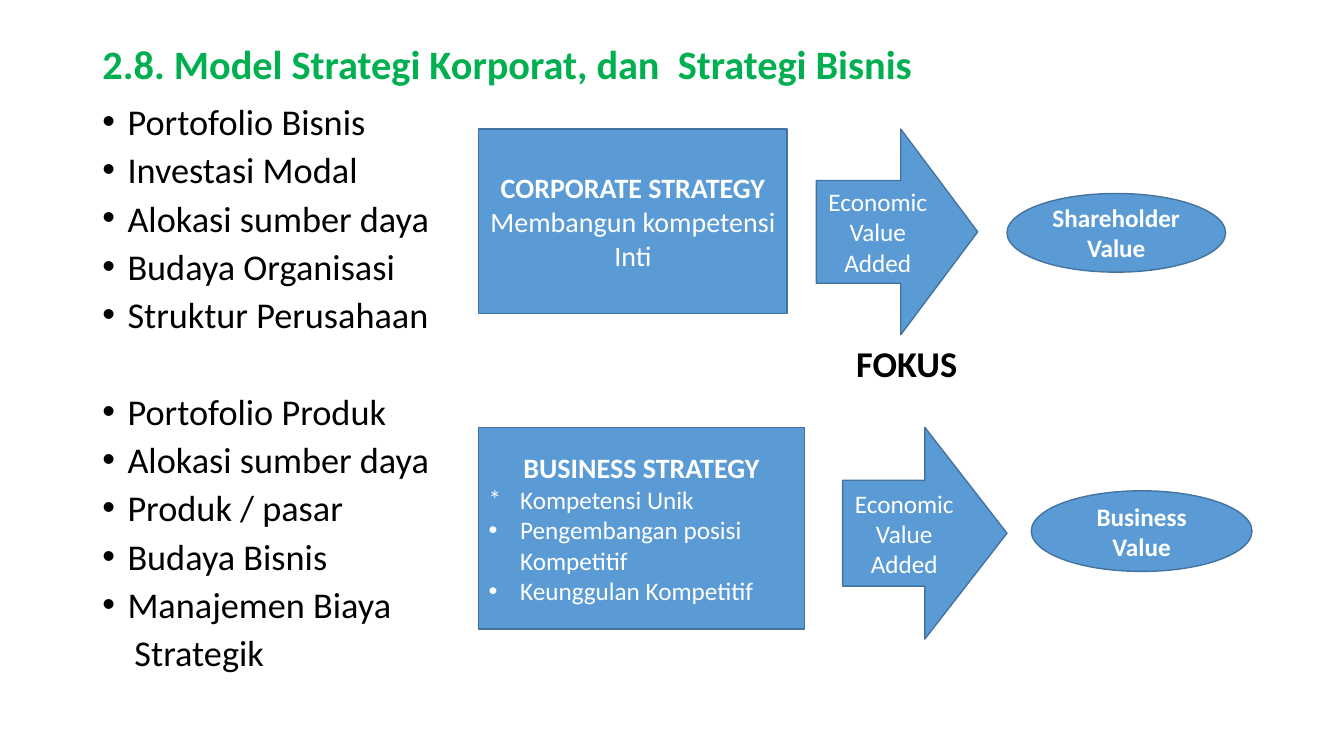
from dataclasses import dataclass

from lxml.etree import SubElement
from pptx import Presentation
from pptx.dml.color import RGBColor
from pptx.enum.shapes import MSO_SHAPE
from pptx.enum.text import MSO_ANCHOR, MSO_AUTO_SIZE, PP_ALIGN
from pptx.oxml.ns import qn
from pptx.util import Pt


@dataclass(frozen=True)
class Theme:
    """Colours, font and type sizes of the slide."""

    font: str = "Calibri"
    green: str = "00B050"
    black: str = "000000"
    white: str = "FFFFFF"
    fill: str = "5B9BD5"
    outline: str = "43739E"
    title: float = 28.8
    body: float = 25.9
    heading: float = 20
    label: float = 18


def write(frame, text, *, font, size, color, bold=False, align=PP_ALIGN.LEFT,
          bullet=None, bullet_font="Arial", margin=0, spacing=None, before=None):
    """Write one formatted paragraph, filling the first one while it is empty."""
    first = frame.paragraphs[0]
    para = frame.add_paragraph() if first.runs else first
    para.alignment = align
    if spacing is not None:
        para.line_spacing = spacing
    if before is not None:
        para.space_before = Pt(before)
    properties = para._p.get_or_add_pPr()
    properties.set("marL", str(Pt(margin)))
    properties.set("indent", str(-Pt(margin) if bullet else 0))
    if bullet:
        SubElement(properties, qn("a:buFont"), typeface=bullet_font)
        SubElement(properties, qn("a:buChar"), char=bullet)
    else:
        SubElement(properties, qn("a:buNone"))
    span = para.add_run()
    span.text = text
    span.font.name = font
    span.font.size = Pt(size)
    span.font.bold = bold
    span.font.color.rgb = RGBColor.from_string(color)


class Page:
    """A slide with its theme and a method for each kind of element."""

    def __init__(self, deck, theme):
        """Add a title-only slide to the deck."""
        self.theme = theme
        self.slide = deck.slides.add_slide(deck.slide_layouts[5])

    def title(self, text, left, top, width, height):
        """Place and format the title."""
        box = self.slide.shapes.title
        box.left, box.top, box.width, box.height = map(Pt, (left, top, width, height))
        frame = box.text_frame
        frame.auto_size = MSO_AUTO_SIZE.NONE
        frame.word_wrap = True
        frame.vertical_anchor = MSO_ANCHOR.MIDDLE
        write(frame, text, font=self.theme.font, size=self.theme.title,
              color=self.theme.green, bold=True, spacing=0.9)

    def outline(self, lines, left, top, width, height):
        """Add the list from pairs of text and paragraph format."""
        box = self.slide.shapes.add_textbox(*map(Pt, (left, top, width, height)))
        frame = box.text_frame
        frame.word_wrap = True
        for text, style in lines:
            write(frame, text, font=self.theme.font, size=self.theme.body,
                  color=self.theme.black, spacing=0.8, before=9.6, **style)

    def shape(self, kind, lines, left, top, width, height, adjustments=()):
        """Add a filled shape from pairs of text and paragraph format."""
        box = self.slide.shapes.add_shape(kind, *map(Pt, (left, top, width, height)))
        box.shadow.inherit = False
        box.fill.solid()
        box.fill.fore_color.rgb = RGBColor.from_string(self.theme.fill)
        box.line.color.rgb = RGBColor.from_string(self.theme.outline)
        box.line.width = Pt(1)
        for index, value in enumerate(adjustments):
            box.adjustments[index] = value
        frame = box.text_frame
        frame.word_wrap = True
        frame.vertical_anchor = MSO_ANCHOR.MIDDLE
        for text, style in lines:
            write(frame, text, font=self.theme.font, color=self.theme.white, **style)


def main():
    """Build the strategy model slide and save it."""
    deck = Presentation()
    deck.slide_width, deck.slide_height = Pt(960), Pt(540)
    theme = Theme()
    page = Page(deck, theme)
    page.title("2.8. Model Strategi Korporat, dan  Strategi Bisnis", 66, 28.8, 828, 37.4)

    item = {"bullet": "•", "margin": 18}
    corporate = ("Portofolio Bisnis", "Investasi Modal", "Alokasi sumber daya",
                 "Budaya Organisasi", "Struktur Perusahaan")
    business = ("Portofolio Produk", "Alokasi sumber daya", "Produk / pasar",
                "Budaya Bisnis", "Manajemen Biaya")
    page.outline([*((text, item) for text in corporate),
                  ("FOKUS", {"bold": True, "margin": 538.5}),
                  *((text, item) for text in business),
                  ("Strategik", {"margin": 23})], 66, 73.4, 838, 430.6)

    centred = {"align": PP_ALIGN.CENTER, "size": theme.label}
    heading = {**centred, "size": theme.heading, "bold": True}
    point = {"size": theme.label, "bullet": "•", "margin": 22.5}
    star = {**point, "bullet": "*", "bullet_font": theme.font}
    rows = (
        ([("CORPORATE STRATEGY", heading),
          ("Membangun kompetensi Inti", {**heading, "bold": False})],
         (342, 92.2, 220.3, 131.8), (583.2, 92.2, 115.2, 146.9), (0.5, 0.477),
         "Shareholder Value", (719.3, 138.2, 156.2, 56.2)),
        ([("BUSINESS STRATEGY", heading), ("Kompetensi Unik", star),
          ("Pengembangan posisi Kompetitif", point), ("Keunggulan Kompetitif", point)],
         (342, 305.3, 232.6, 144), (601.9, 305.3, 117.4, 151.2), (0.5, 0.5),
         "Business Value", (736.6, 350.6, 157.7, 57.6)),
    )
    for strategy, strategy_area, arrow_area, arrow_form, value, value_area in rows:
        page.shape(MSO_SHAPE.RECTANGLE, strategy, *strategy_area)
        page.shape(MSO_SHAPE.RIGHT_ARROW, [("Economic Value Added", centred)],
                   *arrow_area, adjustments=arrow_form)
        page.shape(MSO_SHAPE.OVAL, [(value, {**centred, "bold": True})], *value_area)

    deck.save("out.pptx")


if __name__ == "__main__":
    main()
